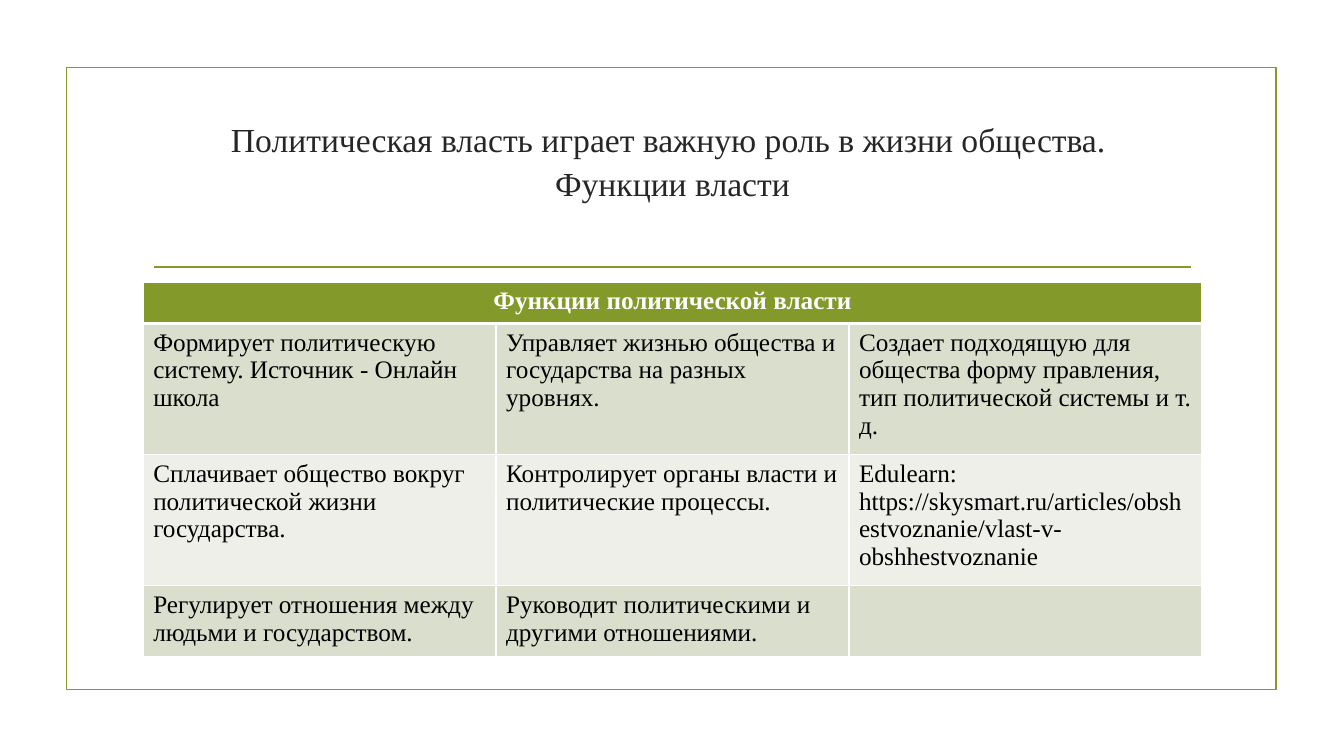
import pptx
import pptx.util
import pptx.dml.color
import pptx.enum.shapes
import pptx.enum.text
import pptx.oxml.ns
from lxml import etree

Inches = pptx.util.Inches
Pt = pptx.util.Pt
RGBColor = pptx.dml.color.RGBColor
ALIGN = pptx.enum.text.PP_ALIGN
ANCHOR = pptx.enum.text.MSO_ANCHOR
qn = pptx.oxml.ns.qn

OLIVE = RGBColor(0x83, 0x99, 0x2A)
DARK_BAND = RGBColor(0xD9, 0xDE, 0xCD)
LIGHT_BAND = RGBColor(0xED, 0xEF, 0xE8)
TITLE_GREY = RGBColor(0x26, 0x26, 0x26)
WHITE = RGBColor(0xFF, 0xFF, 0xFF)
BLACK = RGBColor(0, 0, 0)


def write_text(text_frame, text, size=18, color=BLACK, bold=False,
               align=ALIGN.LEFT, spacing=None):
    paragraph = text_frame.paragraphs[0]
    paragraph.text = text
    paragraph.alignment = align
    paragraph.line_spacing = spacing
    for run in paragraph.runs:
        run.font.name = "Times New Roman"
        run.font.size = Pt(size)
        run.font.bold = bold
        run.font.color.rgb = color


def set_borders(cell, bottom_width):
    properties = cell._tc.get_or_add_tcPr()
    for side, width in (("L", 1), ("R", 1), ("T", 1), ("B", bottom_width)):
        line = etree.SubElement(properties, qn("a:ln" + side), w=str(Pt(width)))
        fill = etree.SubElement(line, qn("a:solidFill"))
        etree.SubElement(fill, qn("a:srgbClr"), val=str(WHITE))


presentation = pptx.Presentation()
presentation.slide_width = Inches(13.33)
presentation.slide_height = Inches(7.5)
slide = presentation.slides.add_slide(presentation.slide_layouts[6])

# Frame
frame = slide.shapes.add_shape(pptx.enum.shapes.MSO_SHAPE.RECTANGLE,
                               Inches(0.66), Inches(0.67), Inches(12), Inches(6.17))
frame.shadow.inherit = False
frame.fill.background()
frame.line.color.rgb = OLIVE
frame.line.width = Pt(1.25)

# Rule under the title
rule = slide.shapes.add_connector(pptx.enum.shapes.MSO_CONNECTOR.STRAIGHT,
                                  Inches(1.53), Inches(2.65), Inches(11.81), Inches(2.65))
rule.line.color.rgb = OLIVE
rule.line.width = Pt(1.25)
etree.SubElement(rule._element.spPr, qn("a:effectLst"))

# Title, raised by a deeper bottom margin
title = slide.shapes.add_textbox(Inches(1.42), Inches(1.07), Inches(10.5), Inches(1.43))
title.text_frame.word_wrap = True
title.text_frame.vertical_anchor = ANCHOR.MIDDLE
title.text_frame.margin_bottom = Inches(0.45)
write_text(title.text_frame,
           "Политическая власть играет важную роль в жизни общества. \vФункции власти",
           size=24, color=TITLE_GREY, align=ALIGN.CENTER, spacing=1.08)

# Table of functions
rows = [
    ["Функции политической власти", "", ""],
    ["Формирует политическую систему. Источник - Онлайн школа",
     "Управляет жизнью общества и государства на разных уровнях.",
     "Создает подходящую для общества форму правления, тип политической системы и т. д."],
    ["Сплачивает общество вокруг политической жизни государства.",
     "Контролирует органы власти и политические процессы.",
     "Edulearn: https://skysmart.ru/articles/obshestvoznanie/vlast-v-obshhestvoznanie"],
    ["Регулирует отношения между людьми и государством.",
     "Руководит политическими и другими отношениями.", ""],
]
row_heights = [0.41, 1.2, 1.2, 0.65]
row_fills = [OLIVE, DARK_BAND, LIGHT_BAND, DARK_BAND]
table = slide.shapes.add_table(4, 3, Inches(1.42), Inches(2.8),
                               Inches(10.5), Inches(sum(row_heights))).table
table.cell(0, 0).merge(table.cell(0, 2))

for row_index, texts in enumerate(rows):
    header = row_index == 0
    table.rows[row_index].height = Inches(row_heights[row_index])
    for column_index, text in enumerate(texts):
        cell = table.cell(row_index, column_index)
        set_borders(cell, 3 if header else 1)
        cell.fill.solid()
        cell.fill.fore_color.rgb = row_fills[row_index]
        if text:
            write_text(cell.text_frame, text, bold=header,
                       color=WHITE if header else BLACK,
                       align=ALIGN.CENTER if header else ALIGN.LEFT)

presentation.save("out.pptx")
